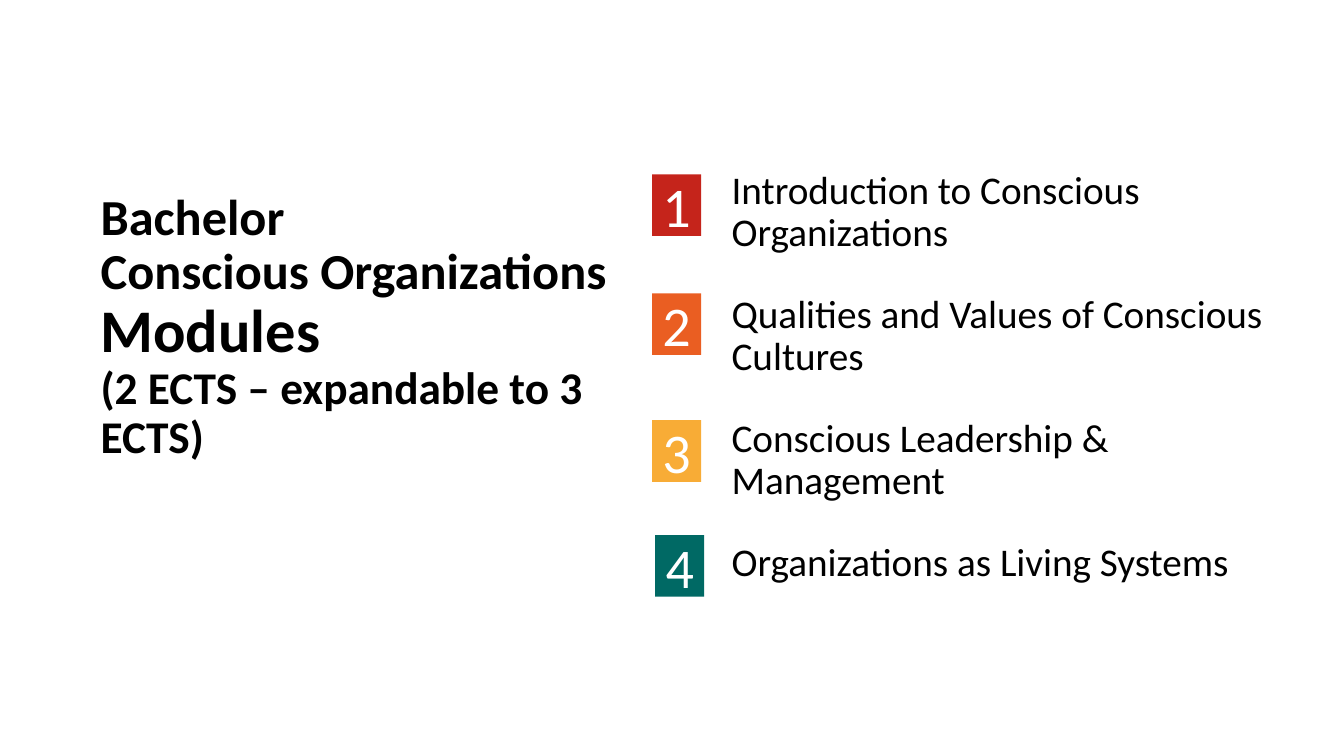
from pptx import Presentation
from pptx.dml.color import RGBColor
from pptx.enum.shapes import MSO_SHAPE
from pptx.enum.text import MSO_ANCHOR, PP_ALIGN
from pptx.util import Pt

COLORS = {
    "text": "000000",
    "number": "FFFFFF",
    "red": "C5241B",
    "orange": "EA5E22",
    "yellow": "F8AC36",
    "teal": "006964",
}

TITLE = [
    ("Bachelor", 36),
    ("Conscious Organizations", 36),
    ("Modules", 43.2),
    ("(2 ECTS – expandable to 3 ECTS)", 32.4),
]
MODULES = [
    "Introduction to Conscious Organizations",
    "Qualities and Values of Conscious Cultures",
    "Conscious Leadership & Management",
    "Organizations as Living Systems",
]
BADGES = [
    (465.8, 124.6, "red"),
    (465.8, 209.5, "orange"),
    (465.8, 300.2, "yellow"),
    (468, 382.3, "teal"),
]


class ModuleSlide:
    font = "Calibri"
    line_spacing = 0.9

    def __init__(self, prs):
        self.s = prs.slides.add_slide(prs.slide_layouts[6])

    def style(self, p, size, color="text", bold=False):
        p.font.name = self.font
        p.font.size = Pt(size)
        p.font.bold = bold
        p.font.color.rgb = RGBColor.from_string(COLORS[color])

    def text_frame(self, x, y, w, h, anchor):
        tf = self.s.shapes.add_textbox(Pt(x), Pt(y), Pt(w), Pt(h)).text_frame
        tf.word_wrap = True
        tf.vertical_anchor = anchor
        return tf

    def title(self, x, y, w, h, lines):
        """Set all lines in one paragraph, each with its own size."""
        p = self.text_frame(x, y, w, h, MSO_ANCHOR.BOTTOM).paragraphs[0]
        p.line_spacing = self.line_spacing
        self.style(p, lines[0][1], bold=True)
        for i, (text, size) in enumerate(lines):
            if i:
                p.add_line_break()
            r = p.add_run()
            r.text = text
            r.font.size = Pt(size)

    def module_list(self, x, y, w, h, items):
        tf = self.text_frame(x, y, w, h, MSO_ANCHOR.MIDDLE)
        for i, item in enumerate(items):
            p = tf.add_paragraph() if i else tf.paragraphs[0]
            p.text = item
            p.line_spacing = self.line_spacing
            p.space_before = Pt(10 if i else 0)
            p.space_after = Pt(18)
            self.style(p, 28)

    def badge(self, x, y, number, color):
        sp = self.s.shapes.add_shape(MSO_SHAPE.RECTANGLE, Pt(x), Pt(y), Pt(35), Pt(44))
        sp.shadow.inherit = False
        sp.fill.solid()
        sp.fill.fore_color.rgb = RGBColor.from_string(COLORS[color])
        sp.line.fill.background()
        tf = sp.text_frame
        tf.margin_left = tf.margin_right = 0
        tf.vertical_anchor = MSO_ANCHOR.MIDDLE
        p = tf.paragraphs[0]
        p.text = str(number)
        p.alignment = PP_ALIGN.CENTER
        self.style(p, 40, "number")


def main():
    prs = Presentation()
    prs.slide_width, prs.slide_height = Pt(960), Pt(540)
    slide = ModuleSlide(prs)
    slide.title(64.8, 168.5, 379.5, 166.3, TITLE)
    slide.module_list(515.5, 77.8, 430.6, 383.8, MODULES)
    for number, (x, y, color) in enumerate(BADGES, 1):
        slide.badge(x, y, number, color)
    prs.save("out.pptx")


if __name__ == "__main__":
    main()
